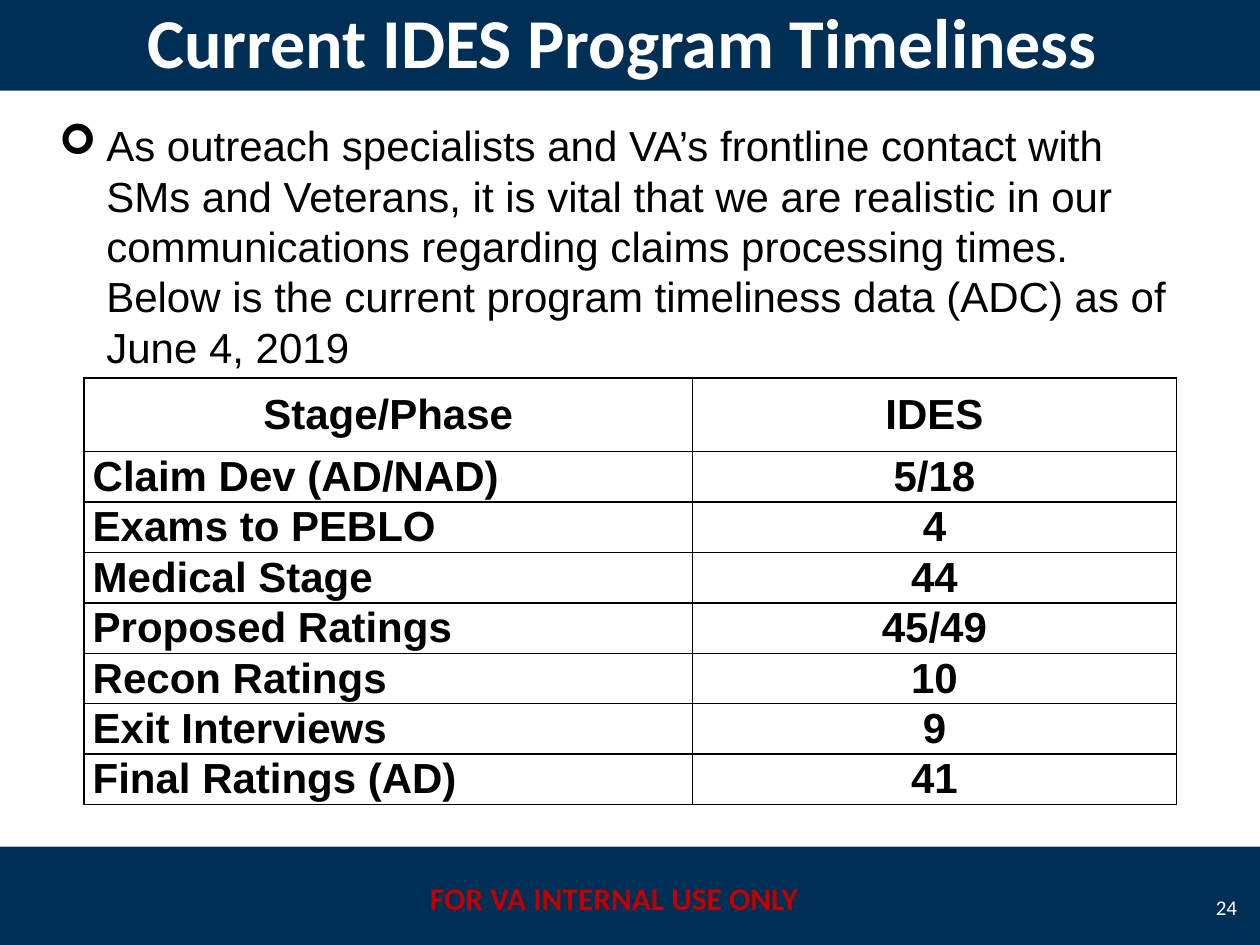
from lxml import etree
from pptx import Presentation
from pptx.dml.color import RGBColor
from pptx.enum import shapes, text
from pptx.oxml import ns
from pptx.util import Pt

NAVY = RGBColor(0x00, 0x2F, 0x56)
WHITE = RGBColor(0xFF, 0xFF, 0xFF)
BLACK = RGBColor(0x00, 0x00, 0x00)
RED = RGBColor(0xC0, 0x00, 0x00)

LEFT, CENTER, RIGHT = text.PP_ALIGN.LEFT, text.PP_ALIGN.CENTER, text.PP_ALIGN.RIGHT
TOP, MIDDLE = text.MSO_ANCHOR.TOP, text.MSO_ANCHOR.MIDDLE

TITLE_BAR = (0, -5.76, 720, 57.6)
FOOTER_BAR = (0, 483.84, 720, 57.6)
HEADER_HEIGHT, ROW_HEIGHT = 42, 28.8
COLUMN_WIDTHS = (347.76, 276.48)

INTRO = (
    "As outreach specialists and VA’s frontline contact with SMs and Veterans, "
    "it is vital that we are realistic in our communications regarding claims "
    "processing times. Below is the current program timeliness data (ADC) as of "
    "June 4, 2019"
)
TIMELINESS = [
    ("Stage/Phase", "IDES"),
    ("Claim Dev (AD/NAD)", "5/18"),
    ("Exams to PEBLO", "4"),
    ("Medical Stage", "44"),
    ("Proposed Ratings", "45/49"),
    ("Recon Ratings", "10"),
    ("Exit Interviews", "9"),
    ("Final Ratings (AD)", "41"),
]


def style(para, font, size, color, bold=False, align=LEFT):
    para.alignment = align
    para.font.name = font
    para.font.size = Pt(size)
    para.font.bold = bold
    para.font.color.rgb = color


def add_bar(page, bounds):
    bar = page.shapes.add_shape(shapes.MSO_SHAPE.RECTANGLE, *map(Pt, bounds))
    bar.shadow.inherit = False
    bar.fill.solid()
    bar.fill.fore_color.rgb = NAVY
    bar.line.fill.background()


def add_text(page, bounds, words, anchor=TOP):
    box = page.shapes.add_textbox(*map(Pt, bounds))
    box.text_frame.word_wrap = True
    box.text_frame.vertical_anchor = anchor
    para = box.text_frame.paragraphs[0]
    para.text = words
    return para


def add_bullet(para, mark, indent):
    props = para._p.get_or_add_pPr()
    props.set("marL", str(Pt(indent)))
    props.set("indent", str(-Pt(indent)))
    etree.SubElement(props, ns.qn("a:buFont")).set("typeface", "Wingdings")
    etree.SubElement(props, ns.qn("a:buChar")).set("char", mark)


def add_borders(cell):
    props = cell._tc.get_or_add_tcPr()
    for position, side in enumerate(("lnL", "lnR", "lnT", "lnB")):
        line = etree.Element(ns.qn(f"a:{side}"), w=str(Pt(1)))
        fill = etree.SubElement(line, ns.qn("a:solidFill"))
        etree.SubElement(fill, ns.qn("a:srgbClr")).set("val", str(BLACK))
        props.insert(position, line)


def fill_cell(cell, words, align):
    cell.fill.background()
    cell.vertical_anchor = MIDDLE
    cell.margin_left = cell.margin_right = Pt(5)
    cell.margin_top = cell.margin_bottom = 0
    para = cell.text_frame.paragraphs[0]
    para.text = words
    style(para, "Arial", 24, BLACK, bold=True, align=align)
    add_borders(cell)


def add_timeliness_table(page, left, top):
    height = HEADER_HEIGHT + ROW_HEIGHT * (len(TIMELINESS) - 1)
    bounds = (left, top, sum(COLUMN_WIDTHS), height)
    table = page.shapes.add_table(
        len(TIMELINESS), len(COLUMN_WIDTHS), *map(Pt, bounds)
    ).table
    table.horz_banding = False
    for column, width in zip(table.columns, COLUMN_WIDTHS):
        column.width = Pt(width)
    for r, values in enumerate(TIMELINESS):
        table.rows[r].height = Pt(ROW_HEIGHT if r else HEADER_HEIGHT)
        for c, words in enumerate(values):
            fill_cell(table.cell(r, c), words, LEFT if r and c == 0 else CENTER)


def main():
    deck = Presentation()
    deck.slide_width, deck.slide_height = Pt(720), Pt(540)
    page = deck.slides.add_slide(deck.slide_layouts[6])

    # Footer and title bars
    add_bar(page, FOOTER_BAR)
    add_bar(page, TITLE_BAR)

    # Footer notice and page number
    notice = add_text(page, (234, 499, 234, 29), "FOR VA INTERNAL USE ONLY")
    style(notice, "Calibri", 18, RED, bold=True, align=CENTER)
    number = add_text(page, (684, 504, 30, 29), "24", MIDDLE)
    style(number, "Calibri", 12, WHITE, align=RIGHT)

    # Title
    title = add_text(page, TITLE_BAR, "Current IDES Program Timeliness ", MIDDLE)
    style(title, "Calibri", 40, WHITE, bold=True, align=CENTER)

    # Introduction
    intro = add_text(page, (26.64, 64.8, 660, 152.64), INTRO)
    add_bullet(intro, "➢", 27)
    style(intro, "Arial", 24, BLACK)
    intro.line_spacing = Pt(28.8)

    # Timeliness by stage
    add_timeliness_table(page, 48, 216)

    deck.save("out.pptx")


if __name__ == "__main__":
    main()
